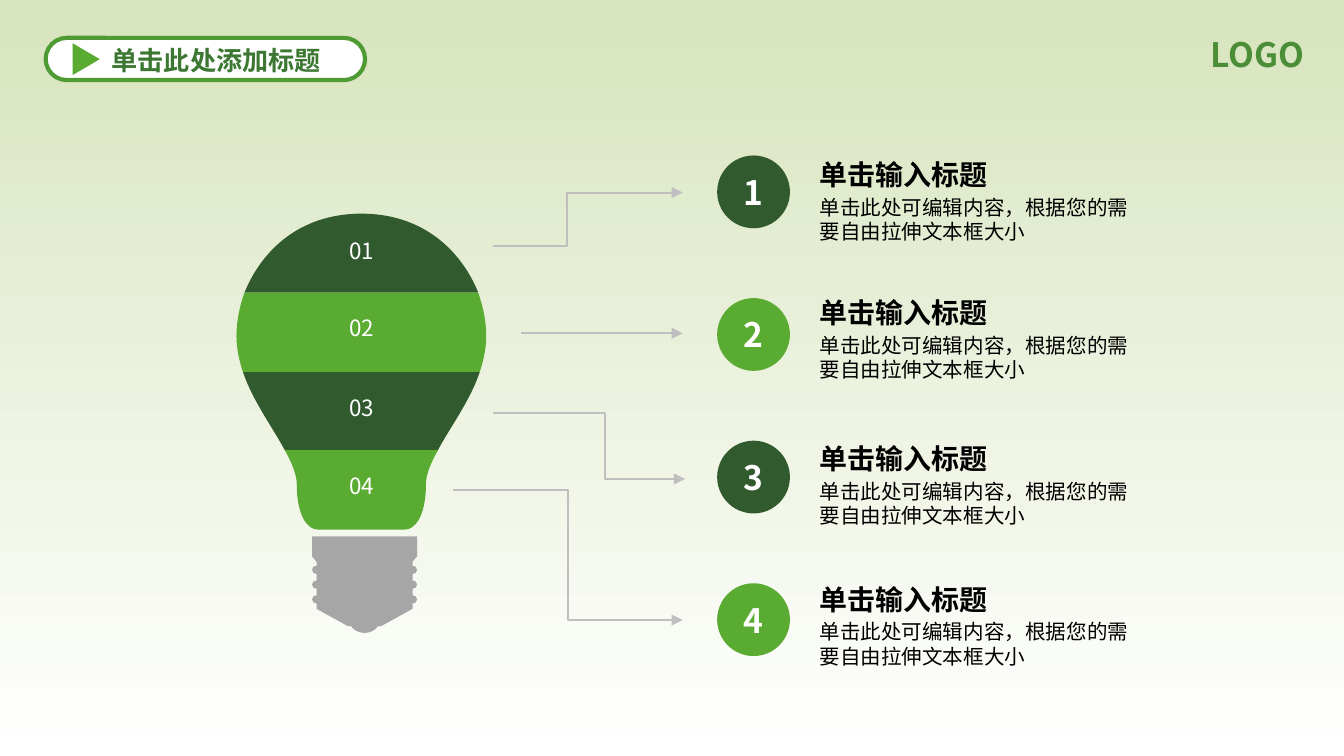
from lxml import etree
from pptx import Presentation
from pptx.dml import color
from pptx.enum import shapes, text
from pptx.oxml import ns
from pptx.util import Pt

CJK = "Noto Sans CJK SC"
DARK, BRIGHT, WHITE, BLACK = "315B2F", "5AAB31", "FFFFFF", "000000"
BASE_GREY, ARROW_GREY = "A6A6A6", "BFBFBF"
BODY = "单击此处可编辑内容，根据您的需要自由拉伸文本框大小"
BULB_CENTRE, BASE_CENTRE = 193.6, 195.3

BANDS = [
    ("01", 127.1, [(0, 114.5), (34, 114.5, 54, 135.4, 62.6, 156.8)]),
    ("02", 168.5, [(62.6, 156.8), (65.5, 164.9, 66.9, 172.8, 66.9, 180),
                   (66.9, 186.5, 65.5, 193, 63.4, 199.4)]),
    ("03", 211.2, [(63.4, 199.4), (58.3, 214.6, 47.5, 229, 41, 241.2)]),
    ("04", 252.7, [(41, 241.2), (37.4, 247.7, 34.6, 254.2, 34.6, 259.2),
                   (34.6, 277.2, 28.4, 283.7, 23.4, 283.7)]),
]
ITEMS = [
    (80.9, (264.2, 131.8), (365.8, 103.2), 0.391),
    (154.9, (279.1, 178.6), (365.8, 178.6), None),
    (233.1, (264.2, 221.2), (367, 256.6), 0.584),
    (308.4, (242.6, 262.5), (365.8, 332.2), 0.5),
]


def rgb(value):
    return color.RGBColor.from_string(value)


def add_child(parent, tag, **attributes):
    return etree.SubElement(parent, ns.qn(tag), **attributes)


def write(frame, content, size, tint, font=CJK, bold=False,
          align=text.PP_ALIGN.LEFT):
    frame.text = content
    paragraph = frame.paragraphs[0]
    paragraph.alignment = align
    run = paragraph.runs[0]
    run.font.name = font
    run.font.size = Pt(size)
    run.font.bold = bold
    run.font.color.rgb = rgb(tint)
    properties = run.font._element
    properties.set("lang", "zh-CN")
    latin = properties.find(ns.qn("a:latin"))
    latin.addnext(etree.Element(ns.qn("a:ea"), typeface=font))


def add_label(slide, box, content, size, tint, wrap=True, inset=None, **style):
    frame = slide.shapes.add_textbox(*map(Pt, box)).text_frame
    frame.word_wrap = wrap
    frame.auto_size = text.MSO_AUTO_SIZE.SHAPE_TO_FIT_TEXT
    if inset is not None:
        frame.margin_left = frame.margin_right = Pt(inset)
        frame.margin_top = frame.margin_bottom = Pt(inset)
    write(frame, content, size, tint, **style)


def paint(shape, fill):
    shape.shadow.inherit = False
    shape.fill.solid()
    shape.fill.fore_color.rgb = rgb(fill)
    shape.line.fill.background()


def add_preset(slide, kind, box, fill):
    shape = slide.shapes.add_shape(kind, *map(Pt, box))
    paint(shape, fill)
    return shape


def pairs(segment):
    return [segment[i:i + 2] for i in range(0, len(segment), 2)]


def mirrored(right_edge):
    segments = [pairs(segment) for segment in right_edge]
    back = []
    if segments[-1][-1][0]:
        x, y = segments[-1][-1]
        back.append([(-x, y)])
    for before, current in zip(segments[-2::-1], segments[:0:-1]):
        controls = current[-2::-1] + [before[-1]]
        back.append([(-x, y) for x, y in controls])
    return segments + back


def bend_segments(shape, segments, left, top):
    lines = shape._element.findall(".//" + ns.qn("a:lnTo"))
    for line, points in zip(lines, segments):
        if len(points) == 3:
            curve = etree.Element(ns.qn("a:cubicBezTo"))
            for x, y in points:
                add_child(curve, "a:pt", x=str(x - left), y=str(y - top))
            line.getparent().replace(line, curve)


def add_symmetric(slide, centre, right_edge, fill):
    segments = [[(Pt(centre + x), Pt(y)) for x, y in points]
                for points in mirrored(right_edge)]
    corners = [points[-1] for points in segments]
    builder = slide.shapes.build_freeform(*corners[0], scale=1.0)
    builder.add_line_segments(corners[1:], close=True)
    shape = builder.convert_to_shape()
    bend_segments(shape, segments[1:], *map(min, zip(*corners)))
    paint(shape, fill)


def base_edge():
    edge = [(28.1, 287.3), (28.1, 298.1), (25.7, 301)]
    for ridge in range(3):
        y = 305.3 + ridge * 7.92
        edge += [(25.7, y - 2.2), (27.1, y - 2.2, 28.1, y - 1.4, 28.1, y),
                 (28.1, y + 1.4, 27.1, y + 2.2, 25.7, y + 2.2)]
    return edge + [(25.7, 326.2), (8.8, 335.5), (7.2, 335.5),
                   (5.8, 337.7, 2.9, 339.1, 0, 339.1)]


def add_arrow(slide, start, end, bend):
    kind = shapes.MSO_CONNECTOR.STRAIGHT if bend is None else shapes.MSO_CONNECTOR.ELBOW
    arrow = slide.shapes.add_connector(kind, *map(Pt, start + end))
    arrow.line.color.rgb = rgb(ARROW_GREY)
    arrow.line.width = Pt(1)
    add_child(arrow.line._get_or_add_ln(), "a:tailEnd", type="triangle")
    properties = arrow._element.spPr
    add_child(properties, "a:effectLst")
    if bend is not None:
        guides = properties.find(".//" + ns.qn("a:avLst"))
        add_child(guides, "a:gd", name="adj1", fmla=f"val {round(bend * 100000)}")


def add_bulb(slide):
    add_symmetric(slide, BASE_CENTRE, base_edge(), BASE_GREY)
    for index, (number, top, edge) in enumerate(BANDS):
        add_symmetric(slide, BULB_CENTRE, edge, (DARK, BRIGHT)[index % 2])
        add_label(slide, (186.5, top, 14.4, 14.4), number, 12, WHITE,
                  wrap=False, inset=0, align=text.PP_ALIGN.CENTER)


def add_item(slide, index, top, start, end, bend):
    badge = add_preset(slide, shapes.MSO_SHAPE.OVAL,
                       (384.2, 83.3 + index * 76.4, 39, 39), (DARK, BRIGHT)[index % 2])
    badge.text_frame.vertical_anchor = text.MSO_ANCHOR.MIDDLE
    write(badge.text_frame, str(index + 1), 18, WHITE, bold=True,
          align=text.PP_ALIGN.CENTER)
    add_arrow(slide, start, end, bend)
    add_label(slide, (432, top + 19.8, 185, 33.8), BODY, 11, BLACK, font="Calibri")
    add_label(slide, (432, top, 221, 25.2), "单击输入标题", 15, BLACK, bold=True)


def add_header(slide):
    pill = add_preset(slide, shapes.MSO_SHAPE.ROUNDED_RECTANGLE,
                      (24.5, 20.3, 171.1, 22.6), WHITE)
    pill.adjustments[0] = 0.5
    pill.line.color.rgb = rgb("4F9B33")
    pill.line.width = Pt(2.25)
    marker = add_preset(slide, shapes.MSO_SHAPE.ISOSCELES_TRIANGLE,
                        (37.6, 24.4, 17.1, 14.6), BRIGHT)
    marker.rotation = 90
    title = slide.shapes.title
    title.left, title.top, title.width, title.height = map(Pt, (52.6, 20.2, 127.4, 24.5))
    frame = title.text_frame
    frame.word_wrap = False
    frame.auto_size = text.MSO_AUTO_SIZE.SHAPE_TO_FIT_TEXT
    frame.vertical_anchor = text.MSO_ANCHOR.TOP
    write(frame, "单击此处添加标题", 14, "3C7832", bold=True)
    pill._element.addnext(title._element)
    add_label(slide, (596.5, 14.4, 109.4, 28.8), "LOGO", 18, "4B8E37",
              bold=True, align=text.PP_ALIGN.RIGHT)


def set_background(slide):
    fill = slide.background.fill
    fill.gradient()
    fill.gradient_angle = 270
    for stop, tint in zip(fill.gradient_stops, ("D7E4BD", WHITE)):
        stop.color.rgb = rgb(tint)


def main():
    deck = Presentation()
    deck.slide_width, deck.slide_height = Pt(720), Pt(405)
    slide = deck.slides.add_slide(deck.slide_layouts[5])
    set_background(slide)
    add_bulb(slide)
    for index, item in enumerate(ITEMS):
        add_item(slide, index, *item)
    add_header(slide)
    deck.save("out.pptx")


if __name__ == "__main__":
    main()
